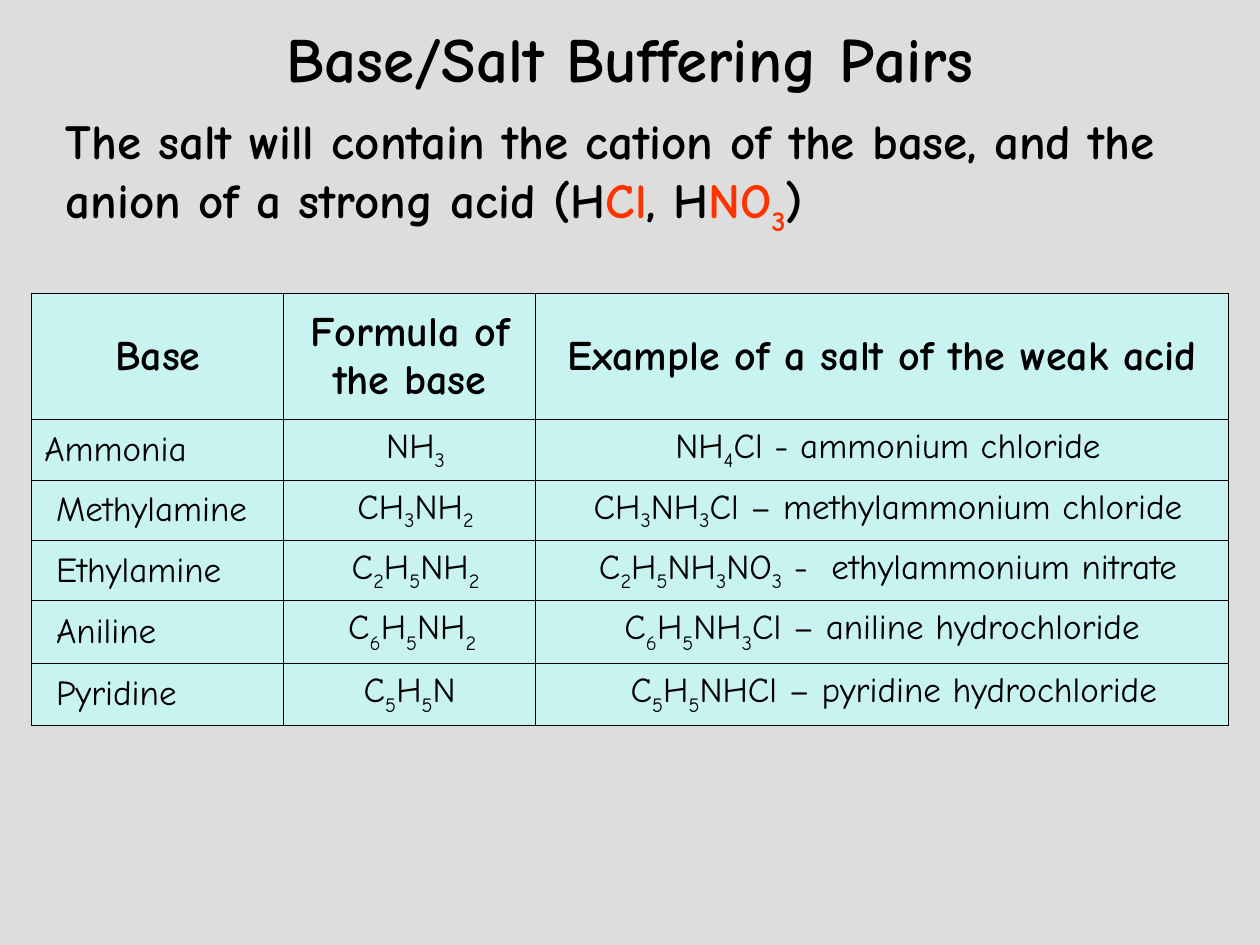
from lxml import etree
from pptx import Presentation, util as u
from pptx.dml.color import RGBColor
from pptx.enum import text
from pptx.oxml import ns

FONT = "Comic Neue"
BLACK, RED, PALE_CYAN, GREY = "000000", "FF3300", "C9F3F0", "DDDDDD"
rgb = RGBColor.from_string


def add_text(para, content, size=20, bold=False, colour=BLACK, baseline=-25):
    """Add text to a paragraph; parts between underscores become subscripts."""
    for index, part in enumerate(content.split("_")):
        if not part:
            continue
        span = para.add_run()
        span.text = part
        span.font.name = FONT
        span.font.size = u.Pt(size)
        span.font.bold = bold
        span.font.color.rgb = rgb(colour)
        if index % 2:
            span.font._element.set("baseline", str(baseline * 1000))


def add_borders(cell, colour=BLACK, width=0.75):
    """Draw a solid line on all four sides of a table cell."""
    properties = cell._tc.get_or_add_tcPr()
    for position, side in enumerate(("lnL", "lnR", "lnT", "lnB")):
        line = etree.Element(ns.qn("a:" + side), w=str(u.Pt(width)))
        fill = etree.SubElement(line, ns.qn("a:solidFill"))
        etree.SubElement(fill, ns.qn("a:srgbClr"), val=colour)
        properties.insert(position, line)


deck = Presentation()
deck.slide_width, deck.slide_height = u.Cm(25.4), u.Cm(19.05)
page = deck.slides.add_slide(deck.slide_layouts[1])
page.background.fill.solid()
page.background.fill.fore_color.rgb = rgb(GREY)

# Title
title = page.shapes.title
title.left, title.top, title.width, title.height = u.Cm(1.27), u.Cm(0.43), u.Cm(22.86), u.Cm(1.47)
title.text_frame.vertical_anchor = text.MSO_ANCHOR.MIDDLE
title.text_frame.auto_size = text.MSO_AUTO_SIZE.NONE
para = title.text_frame.paragraphs[0]
para.alignment = text.PP_ALIGN.CENTER
add_text(para, "Base/Salt Buffering Pairs", size=36, bold=True)

# Explanation, without bullet
body = page.placeholders[1]
body.left, body.top, body.width, body.height = u.Cm(1.07), u.Cm(2.11), u.Cm(23.32), u.Cm(2.62)
body.text_frame.auto_size = text.MSO_AUTO_SIZE.SHAPE_TO_FIT_TEXT
para = body.text_frame.paragraphs[0]
para.space_before = u.Pt(0)
properties = para._p.get_or_add_pPr()
properties.set("marL", "0")
properties.set("indent", "0")
etree.SubElement(properties, ns.qn("a:buNone"))
for content, colour in (
    ("The salt will contain the cation of the base, and the anion of a strong acid (H", BLACK),
    ("Cl", RED),
    (", H", BLACK),
    ("NO_3_", RED),
    (")", BLACK),
):
    add_text(para, content, size=28, bold=True, colour=colour)

# Table of buffering pairs
rows = [
    ("Base", "Formula of the base", "Example of a salt of the weak acid"),
    ("Ammonia ", " NH_3_", " NH_4_Cl - ammonium chloride"),
    (" Methylamine", " CH_3_NH_2_", " CH_3_NH_3_Cl – methylammonium chloride"),
    (" Ethylamine", " C_2_H_5_NH_2_", " C_2_H_5_NH_3_NO_3_ -  ethylammonium nitrate"),
    (" Aniline", " C_6_H_5_NH_2 _", "C_6_H_5_NH_3_Cl – aniline hydrochloride"),
    (" Pyridine", " C_5_H_5_N ", "  C_5_H_5_NHCl – pyridine hydrochloride"),
]
column_widths = (5.08, 5.08, 13.97)
header_height, row_height = 2.54, 0.69  # body rows grow to fit their text
frame = page.shapes.add_table(
    len(rows), len(column_widths), u.Cm(0.64), u.Cm(5.92), u.Cm(sum(column_widths)), u.Cm(8.05)
)
table = frame.table
table.first_row = table.horz_banding = False
for column, width in zip(table.columns, column_widths):
    column.width = u.Cm(width)

for row_index, contents in enumerate(rows):
    header = row_index == 0
    table.rows[row_index].height = u.Cm(header_height if header else row_height)
    for column_index, content in enumerate(contents):
        cell = table.cell(row_index, column_index)
        cell.vertical_anchor = text.MSO_ANCHOR.MIDDLE
        cell.fill.solid()
        cell.fill.fore_color.rgb = rgb(PALE_CYAN)
        add_borders(cell)
        para = cell.text_frame.paragraphs[0]
        if header or column_index:
            para.alignment = text.PP_ALIGN.CENTER
        add_text(para, content, size=24 if header else 20, bold=header,
                 baseline=-30 if row_index > 3 else -25)

deck.save("out.pptx")
